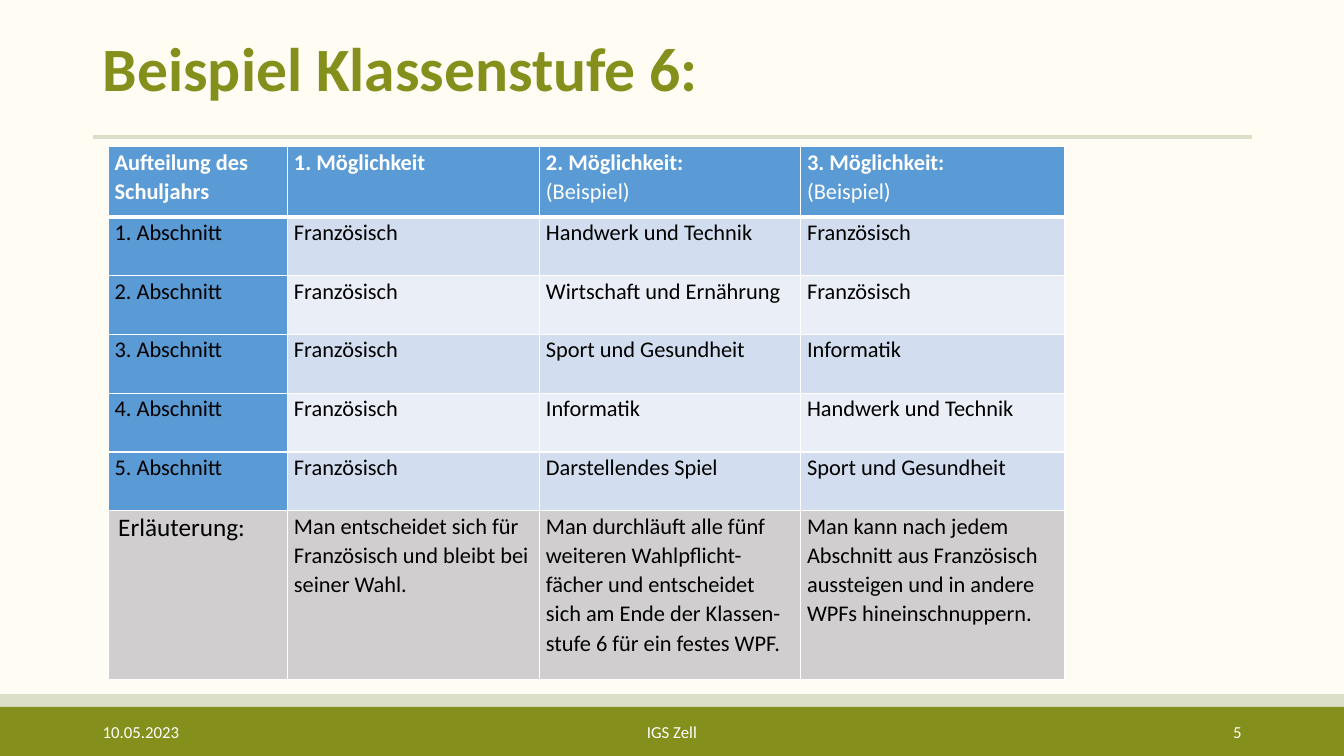
from lxml import etree
from pptx import Presentation, util as u
from pptx.dml.color import RGBColor
from pptx.enum import shapes, text
from pptx.oxml import ns

OLIVE, SAGE, CREAM = "84901B", "DCDFC7", "FFFCF3"
WHITE, BLACK, BLUE, GREY = "FFFFFF", "000000", "5B9BD5", "D0CECE"
BANDS = ["D2DEEF", "EAEFF7"]
MARGIN, RIGHT_EDGE = 2.34, 31.54

HEADINGS = [
    ["Aufteilung des Schuljahrs"],
    ["1. Möglichkeit"],
    ["2. Möglichkeit:", "(Beispiel)"],
    ["3. Möglichkeit:", "(Beispiel)"],
]
SECOND_CHOICE = ["Handwerk und Technik", "Wirtschaft und Ernährung",
                 "Sport und Gesundheit", "Informatik", "Darstellendes Spiel"]
THIRD_CHOICE = ["Französisch", "Französisch", "Informatik",
                "Handwerk und Technik", "Sport und Gesundheit"]
EXPLANATIONS = [
    "Man entscheidet sich für Französisch und bleibt bei seiner Wahl.",
    "Man durchläuft alle fünf weiteren Wahlpflicht-fächer und entscheidet "
    "sich am Ende der Klassen-stufe 6 für ein festes WPF.",
    "Man kann nach jedem Abschnitt aus Französisch aussteigen und in andere "
    "WPFs hineinschnuppern.",
]
COLUMN_WIDTHS = [4.52, 6.35, 6.58, 6.65]
ROW_HEIGHTS = [1.77] + [1.48] * 5 + [4.25]


def colour(code):
    return RGBColor.from_string(code)


def apply(target, values):
    for name, value in values.items():
        setattr(target, name, value)


class SlideBuilder:
    """Holds the style and the current slide."""

    font = "Calibri"

    def __init__(self, deck):
        self.slide = deck.slides.add_slide(deck.slide_layouts[5])
        self.slide.background.fill.solid()
        self.slide.background.fill.fore_color.rgb = colour(CREAM)

    def put_words(self, paragraph, words, size, ink, bold=False):
        paragraph.text = words
        apply(paragraph.font, {"name": self.font, "size": u.Pt(size), "bold": bold})
        paragraph.font.color.rgb = colour(ink)

    def title(self, words, left, top, width, height):
        heading = self.slide.shapes.title
        apply(heading, {"left": u.Cm(left), "top": u.Cm(top),
                        "width": u.Cm(width), "height": u.Cm(height)})
        apply(heading.text_frame, {"vertical_anchor": text.MSO_ANCHOR.MIDDLE,
                                   "word_wrap": True,
                                   "auto_size": text.MSO_AUTO_SIZE.NONE})
        line = heading.text_frame.paragraphs[0]
        self.put_words(line, words, 44, OLIVE, True)
        apply(line, {"alignment": text.PP_ALIGN.LEFT, "line_spacing": 0.9})

    def bar(self, top, height, fill):
        band = self.slide.shapes.add_shape(
            shapes.MSO_SHAPE.RECTANGLE, 0, u.Cm(top), u.Cm(33.87), u.Cm(height))
        band.shadow.inherit = False
        band.fill.solid()
        band.fill.fore_color.rgb = colour(fill)
        band.line.fill.background()

    def rule(self, left, right, height):
        divider = self.slide.shapes.add_connector(
            shapes.MSO_CONNECTOR.STRAIGHT, u.Cm(left), u.Cm(height), u.Cm(right), u.Cm(height))
        divider.line.color.rgb = colour(SAGE)
        divider.line.width = u.Pt(3)
        etree.SubElement(divider._element.spPr, ns.qn("a:effectLst"))

    def footer(self, words, left, width, alignment):
        note = self.slide.shapes.add_textbox(
            u.Cm(left), u.Cm(18.16), u.Cm(width), u.Cm(0.56)).text_frame
        apply(note, {"word_wrap": True, "vertical_anchor": text.MSO_ANCHOR.MIDDLE})
        self.put_words(note.paragraphs[0], words, 12, WHITE)
        note.paragraphs[0].alignment = alignment

    def table(self, left, top, widths, heights):
        grid = self.slide.shapes.add_table(
            len(heights), len(widths), u.Cm(left), u.Cm(top),
            u.Cm(sum(widths)), u.Cm(sum(heights))).table
        apply(grid, {"first_row": False, "horz_banding": False})
        for column, width in zip(grid.columns, widths):
            column.width = u.Cm(width)
        for row, height in zip(grid.rows, heights):
            row.height = u.Cm(height)
        return grid

    def cell(self, cell, lines, fill, ink=BLACK, size=16, bold=False, inset=0.16, edges=(1, 1)):
        apply(cell, {"margin_left": u.Cm(inset), "margin_right": u.Cm(0.16),
                     "margin_top": 0, "margin_bottom": 0})
        cell.fill.solid()
        cell.fill.fore_color.rgb = colour(fill)
        for number, words in enumerate(lines):
            frame = cell.text_frame
            paragraph = frame.add_paragraph() if number else frame.paragraphs[0]
            self.put_words(paragraph, words, size, ink, bold and number == 0)
            paragraph.line_spacing = 1.07
        self.borders(cell, *edges)

    def borders(self, cell, top, bottom):
        properties = cell._tc.get_or_add_tcPr()
        sides = {"L": 1, "R": 1, "T": top, "B": bottom}
        for position, (side, points) in enumerate(sides.items()):
            edge = etree.Element(ns.qn(f"a:ln{side}"), w=str(u.Pt(points)))
            fill = etree.SubElement(edge, ns.qn("a:solidFill"))
            etree.SubElement(fill, ns.qn("a:srgbClr"), val=WHITE)
            properties.insert(position, edge)


def main():
    deck = Presentation()
    apply(deck, {"slide_width": u.Cm(33.87), "slide_height": u.Cm(19.05)})
    page = SlideBuilder(deck)
    page.bar(17.49, 0.33, SAGE)
    page.bar(17.81, 1.24, OLIVE)
    page.rule(MARGIN, RIGHT_EDGE, 3.45)
    page.title("Beispiel Klassenstufe 6:", MARGIN, 0.69, 25.53, 2.24)
    page.footer("10.05.2023", MARGIN, 7.62, text.PP_ALIGN.LEFT)
    page.footer("IGS Zell", 11.22, 11.43, text.PP_ALIGN.CENTER)
    page.footer("5", RIGHT_EDGE - 7.62, 7.62, text.PP_ALIGN.RIGHT)

    plan = page.table(2.73, 3.7, COLUMN_WIDTHS, ROW_HEIGHTS)
    for column, lines in enumerate(HEADINGS):
        page.cell(plan.cell(0, column), lines, BLUE, WHITE, bold=True, edges=(1, 3))
    plan.cell(0, 1).text_frame.paragraphs[0].alignment = text.PP_ALIGN.JUSTIFY

    for row, choices in enumerate(zip(SECOND_CHOICE, THIRD_CHOICE), start=1):
        edges = (3 if row == 1 else 1, 1)
        page.cell(plan.cell(row, 0), [f"{row}. Abschnitt"], BLUE, edges=edges)
        for column, subject in enumerate(("Französisch", *choices), start=1):
            page.cell(plan.cell(row, column), [subject], BANDS[(row - 1) % 2], edges=edges)

    page.cell(plan.cell(6, 0), ["Erläuterung:"], GREY, size=18, inset=0.25)
    for column, explanation in enumerate(EXPLANATIONS, start=1):
        page.cell(plan.cell(6, column), [explanation], GREY)
    deck.save("out.pptx")


if __name__ == "__main__":
    main()
